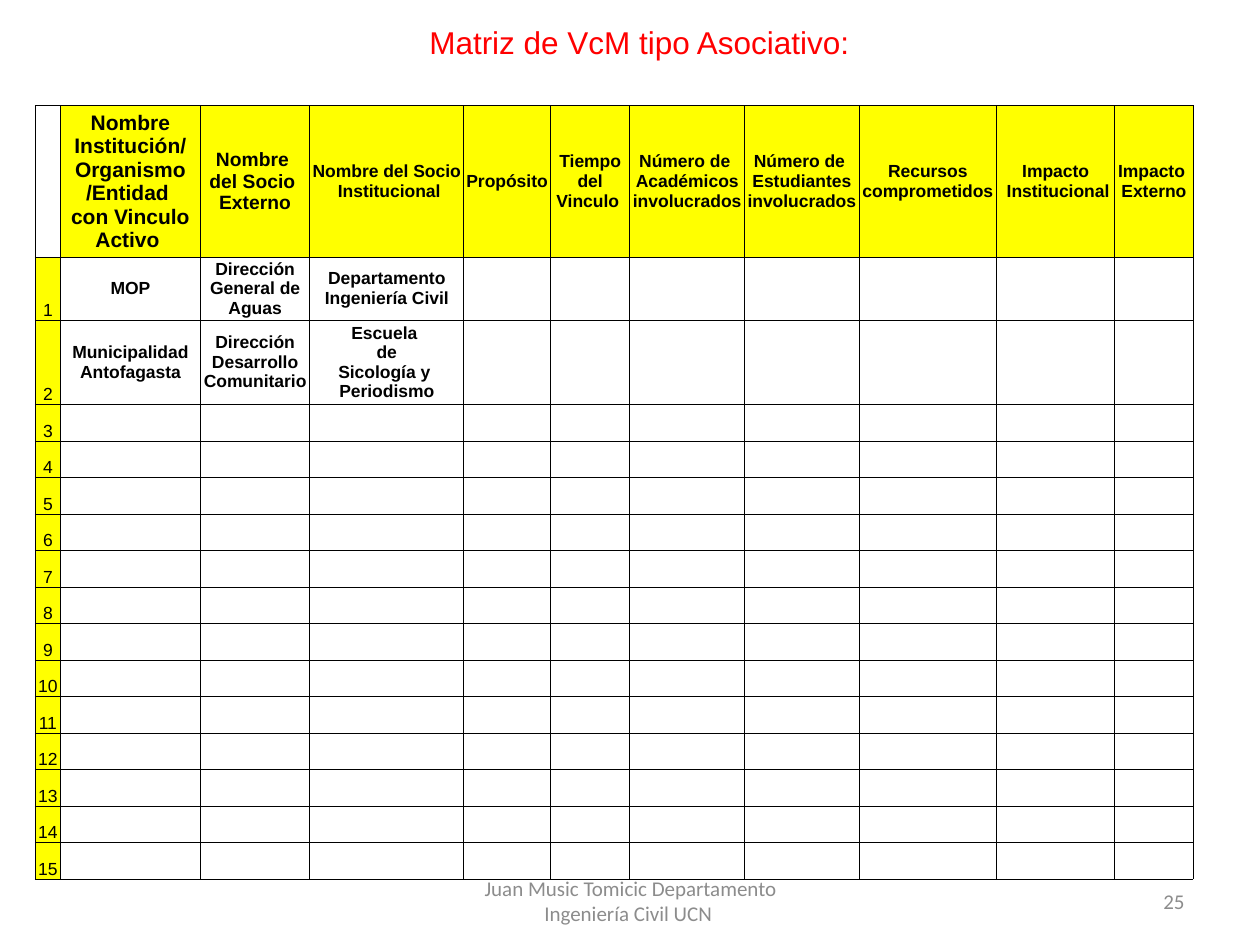
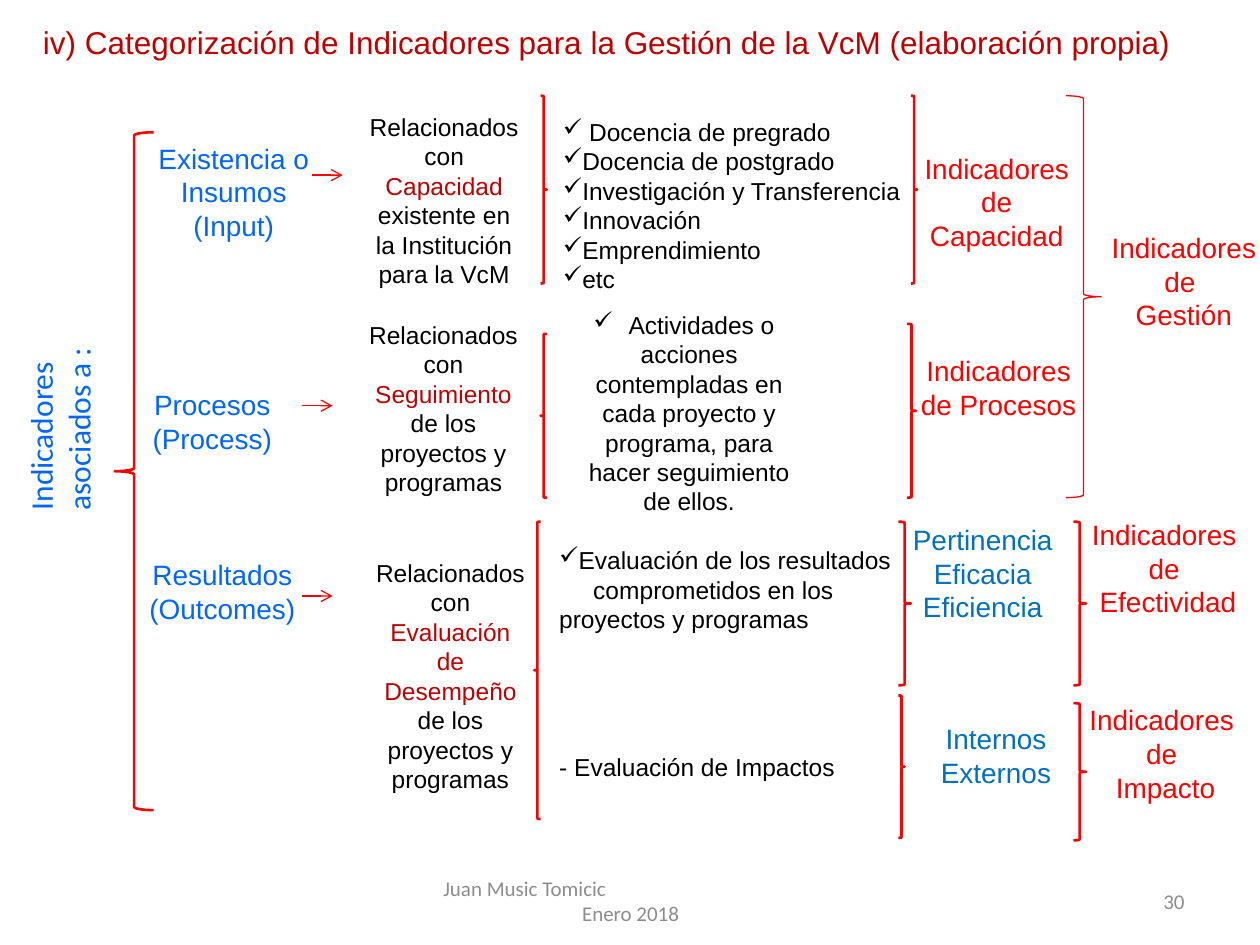
from dataclasses import dataclass

import lxml.etree
import pptx
import pptx.dml.color
import pptx.enum.shapes
import pptx.enum.text
import pptx.oxml
import pptx.oxml.ns
import pptx.slide
import pptx.util

Inches = pptx.util.Inches
Pt = pptx.util.Pt
RGBColor = pptx.dml.color.RGBColor
ALIGN = pptx.enum.text.PP_ALIGN
ANCHOR = pptx.enum.text.MSO_ANCHOR
SHAPE = pptx.enum.shapes.MSO_SHAPE
qn = pptx.oxml.ns.qn

RED = RGBColor(0xFF, 0x00, 0x00)
DARK_RED = RGBColor(0xC0, 0x00, 0x00)
BLUE = RGBColor(0x00, 0x66, 0xFF)
TEAL_BLUE = RGBColor(0x00, 0x70, 0xC0)
BLACK = RGBColor(0x00, 0x00, 0x00)
YELLOW = RGBColor(0xFF, 0xFF, 0x00)
GRAY = RGBColor(0x8C, 0x8C, 0x8C)

COLUMN_WIDTHS = [0.2, 1.11, 0.87, 1.22, 0.69, 0.63, 0.91, 0.91, 1.09, 0.94, 0.62]
ROW_HEIGHTS = [1.13, 0.47, 0.63] + [0.29] * 13
HEADINGS = [
    ["Nombre Institución/ Organismo /Entidad ", "con Vinculo Activo "],
    ["Nombre ", "del Socio ", "Externo"],
    ["Nombre del Socio", " Institucional"],
    ["Propósito"],
    ["Tiempo del Vinculo "],
    ["Número de ", "Académicos", "involucrados"],
    ["Número de ", "Estudiantes", "involucrados"],
    ["Recursos", "comprometidos"],
    ["Impacto", " Institucional"],
    ["Impacto ", "Externo"],
]
HEADING_SIZES = [12, 11] + [10] * 8
PARTNERS = [
    [["MOP"], ["Dirección General de Aguas"], ["Departamento", "Ingeniería Civil"]],
    [["Municipalidad", "Antofagasta"],
     ["Dirección", " Desarrollo ", "Comunitario"],
     ["Escuela ", "de", "Sicología y ", "Periodismo"]],
]


def style_font(font, size, color, name="Arial", bold=False):
    """Apply size, colour, typeface and weight to a font."""
    font.size = Pt(size)
    font.color.rgb = color
    font.name = name
    font.bold = bold


def write_lines(frame, lines, size, color, name="Arial", bold=False, align=ALIGN.CENTER):
    """Write one paragraph per line; a line is a string or (text, colour) runs."""
    for index, line in enumerate(lines):
        paragraph = frame.paragraphs[0] if index == 0 else frame.add_paragraph()
        paragraph.alignment = align
        style_font(paragraph.font, size, color, name, bold)
        if isinstance(line, str):
            paragraph.add_run().text = line
        else:
            for text, run_color in line:
                run = paragraph.add_run()
                run.text = text
                run.font.color.rgb = run_color


def add_check(paragraph):
    """Give a paragraph a check-mark bullet."""
    properties = paragraph._p.get_or_add_pPr()
    lxml.etree.SubElement(properties, qn("a:buChar")).set("char", "✓")


@dataclass
class Region:
    """An area of a slide whose parts are placed from its top left corner."""
    slide: pptx.slide.Slide
    left: float
    top: float

    def text(self, x, y, width, height, lines, size, color, **style):
        """Add wrapped text and return its frame."""
        box = self.slide.shapes.add_textbox(
            Inches(self.left + x), Inches(self.top + y), Inches(width), Inches(height))
        frame = box.text_frame
        frame.word_wrap = True
        write_lines(frame, lines, size, color, **style)
        return frame

    def brace(self, x, y, width, height, kind=SHAPE.RIGHT_BRACE, weight=1.5):
        """Add a red brace."""
        brace = self.slide.shapes.add_shape(
            kind, Inches(self.left + x), Inches(self.top + y), Inches(width), Inches(height))
        brace.shadow.inherit = False
        brace.fill.background()
        brace.line.color.rgb = RED
        brace.line.width = Pt(weight)

    def arrow(self, x, y):
        """Add a short red arrow pointing right."""
        start, level = Inches(self.left + x), Inches(self.top + y)
        arrow = self.slide.shapes.add_connector(
            pptx.enum.shapes.MSO_CONNECTOR.STRAIGHT, start, level, start + Inches(0.24), level)
        arrow.line.color.rgb = RED
        arrow.line.width = Pt(0.75)
        lxml.etree.SubElement(arrow.line._get_or_add_ln(), qn("a:tailEnd")).set("type", "arrow")
        lxml.etree.SubElement(arrow._element.spPr, qn("a:effectLst"))


def new_slide(deck, title, left, width, color, footer, number, footer_align=ALIGN.CENTER):
    """Add a slide with its title, footer and page number."""
    slide = deck.slides.add_slide(deck.slide_layouts[5])
    heading = slide.shapes.title
    heading.left, heading.top = Inches(left), Inches(0.13)
    heading.width, heading.height = Inches(width), Inches(0.4)
    frame = heading.text_frame
    frame.auto_size = pptx.enum.text.MSO_AUTO_SIZE.NONE
    frame.vertical_anchor = ANCHOR.TOP
    write_lines(frame, [title], 18, color)
    base = Region(slide, 3.42, 6.95)
    for x, breadth, lines, align in [
            (0, 3.17, footer, footer_align), (3.75, 2.33, [number], ALIGN.RIGHT)]:
        note = base.text(x, 0, breadth, 0.4, lines, 12, GRAY, name="Calibri", align=align)
        note.vertical_anchor = ANCHOR.MIDDLE
    return slide


def format_cell(cell, lines, size=10, bold=True, fill=None, anchor=ANCHOR.MIDDLE):
    """Fill one cell with text and draw thin black borders around it."""
    cell.margin_left = cell.margin_right = cell.margin_top = cell.margin_bottom = 0
    cell.vertical_anchor = anchor
    write_lines(cell.text_frame, lines or [[]], size, BLACK, bold=bold)
    for side in ("lnL", "lnR", "lnT", "lnB"):
        cell._tc.get_or_add_tcPr().append(pptx.oxml.parse_xml(
            f'<a:{side} xmlns:a="http://schemas.openxmlformats.org/drawingml/2006/main" w="6350">'
            f'<a:solidFill><a:srgbClr val="{BLACK}"/></a:solidFill></a:{side}>'))
    if fill is None:
        cell.fill.background()
    else:
        cell.fill.solid()
        cell.fill.fore_color.rgb = fill


def add_matrix(slide, left, top):
    """Add the matrix of partner institutions."""
    matrix = slide.shapes.add_table(
        len(ROW_HEIGHTS), len(COLUMN_WIDTHS), Inches(left), Inches(top),
        Inches(sum(COLUMN_WIDTHS)), Inches(sum(ROW_HEIGHTS))).table
    matrix.first_row = matrix.horz_banding = False
    for column, width in zip(matrix.columns, COLUMN_WIDTHS):
        column.width = Inches(width)
    for row, height in zip(matrix.rows, ROW_HEIGHTS):
        row.height = Inches(height)
    format_cell(matrix.cell(0, 0), [])
    for column, (lines, size) in enumerate(zip(HEADINGS, HEADING_SIZES), 1):
        format_cell(matrix.cell(0, column), lines, size, fill=YELLOW)
    for row in range(1, len(ROW_HEIGHTS)):
        format_cell(matrix.cell(row, 0), [str(row)], bold=False, fill=YELLOW, anchor=ANCHOR.BOTTOM)
        partner = PARTNERS[row - 1] if row <= len(PARTNERS) else []
        for column in range(1, len(COLUMN_WIDTHS)):
            format_cell(matrix.cell(row, column),
                        partner[column - 1] if column <= len(partner) else [])


def add_root(slide, left, top):
    """Add the vertical label and the brace that opens the diagram."""
    root = Region(slide, left, top)
    label = root.text(0, 0.84, 1.11, 2.26, ["Indicadores", "asociados a :"], 18, BLUE,
                      name="Calibri", align=ALIGN.LEFT)
    label._txBody.bodyPr.set("vert", "vert270")
    root.brace(0.79, 0, 0.31, 5.38, SHAPE.LEFT_BRACE)


def related_to(subject, rest):
    """Return the runs of a relation with its subject highlighted."""
    return [[("Relacionados con ", BLACK), (subject + " ", DARK_RED), (rest, BLACK)]]


def add_input_stage(slide, left, top):
    """Add the row of capacity indicators."""
    stage = Region(slide, left, top)
    stage.text(0.15, 0.31, 1.59, 1.18, ["Existencia o Insumos", "(Input)"], 16, BLUE)
    stage.arrow(1.57, 0.63)
    stage.text(1.89, 0.08, 1.45, 1.51,
               related_to("Capacidad", "existente en la Institución para la VcM"), 14, BLACK)
    stage.brace(3.38, 0, 0.05, 1.49)
    areas = stage.text(3.46, 0.12, 3.77, 1.75, [
        " Docencia de pregrado", "Docencia de postgrado", "Investigación y Transferencia",
        "Innovación", "Emprendimiento", "etc"], 14, BLACK, align=ALIGN.LEFT)
    for area in areas.paragraphs:
        add_check(area)
    stage.brace(6.32, 0, 0.05, 1.49)
    stage.text(6.29, 0.39, 1.42, 0.91, ["Indicadores de Capacidad"], 16, RED)


def add_process_stage(slide, left, top):
    """Add the row of process indicators."""
    stage = Region(slide, left, top)
    stage.text(0, 0.54, 1.55, 0.64, ["Procesos", "(Process)"], 16, BLUE)
    stage.arrow(1.49, 0.73)
    stage.text(1.89, 0, 1.44, 1.51,
               related_to("Seguimiento", "de los proyectos y programas"), 14, BLACK)
    stage.brace(3.38, 0.16, 0.05, 1.3, SHAPE.LEFT_BRACE)
    activities = stage.text(3.54, -0.08, 2.04, 1.75, [
        " Actividades o acciones contempladas en cada proyecto y programa, "
        "para hacer seguimiento de ellos."], 14, BLACK)
    add_check(activities.paragraphs[0])
    stage.brace(6.29, 0.08, 0.07, 1.38)
    stage.text(6.29, 0.27, 1.45, 0.64, ["Indicadores de Procesos"], 16, RED)


def add_outcome_stage(slide, left, top):
    """Add the rows of effectiveness and impact indicators."""
    stage = Region(slide, left, top)
    stage.text(0.07, 0.24, 1.57, 0.64, ["Resultados", "(Outcomes)"], 16, BLUE)
    stage.arrow(1.49, 0.59)
    stage.text(1.96, 0.24, 1.41, 1.99,
               related_to("Evaluación de Desempeño", "de los proyectos y programas"), 14, BLACK)
    stage.brace(3.33, 0, 0.05, 2.36, SHAPE.LEFT_BRACE)
    results = stage.text(3.43, 0.14, 3.1, 0.8, [
        "Evaluación de los resultados", "comprometidos en los ", "proyectos y programas"],
        14, BLACK, align=ALIGN.LEFT)
    add_check(results.paragraphs[0])
    results.paragraphs[1]._p.get_or_add_pPr().set("indent", str(Inches(0.27)))
    stage.text(3.43, 1.78, 3.1, 0.34, ["- Evaluación de Impactos"], 14, BLACK, align=ALIGN.LEFT)
    stage.brace(6.22, 0, 0.1, 1.3)
    stage.text(6.22, -0.04, 1.34, 0.91, ["Pertinencia Eficacia", "Eficiencia"], 16, TEAL_BLUE)
    stage.brace(6.22, 1.38, 0.05, 1.13)
    stage.text(6.27, 1.54, 1.45, 0.64, ["Internos", " Externos "], 16, TEAL_BLUE)
    stage.brace(7.61, 0, 0.1, 1.3)
    stage.brace(7.61, 1.44, 0.1, 1.09)
    for y, width, target in [(-0.08, 1.46, "Efectividad"), (1.39, 1.42, "Impacto")]:
        stage.text(7.63, y, width, 1.21, ["Indicadores ", "de ", target], 16, RED)


def add_management(slide, left, top):
    """Add the brace that joins capacity and process into management."""
    management = Region(slide, left, top)
    management.brace(0, 0, 0.28, 3.19, weight=0.75)
    management.text(0.19, 1.02, 1.49, 1.18, ["Indicadores de ", "Gestión"], 16, RED)


def main():
    """Build and save the deck."""
    deck = pptx.Presentation()
    deck.slide_width, deck.slide_height = Inches(10), Inches(7.5)
    matrix_slide = new_slide(
        deck, "Matriz de VcM tipo Asociativo:", 0.43, 9.29, RED,
        ["Juan Music Tomicic Departamento Ingeniería Civil UCN "], "25")
    add_matrix(matrix_slide, 0.28, 0.84)
    diagram = new_slide(
        deck, "iv) Categorización de Indicadores para la Gestión de la VcM (elaboración propia)",
        0.05, 9.53, DARK_RED, ["Juan Music Tomicic", "Enero 2018"], "30", ALIGN.LEFT)
    footer_date = diagram.shapes[1].text_frame.paragraphs[1]
    footer_date.alignment = ALIGN.CENTER
    add_root(diagram, 0.12, 1.05)
    add_input_stage(diagram, 0.91, 0.76)
    add_process_stage(diagram, 0.91, 2.49)
    add_outcome_stage(diagram, 0.91, 4.14)
    add_management(diagram, 8.46, 0.76)
    deck.save("out.pptx")


if __name__ == "__main__":
    main()
